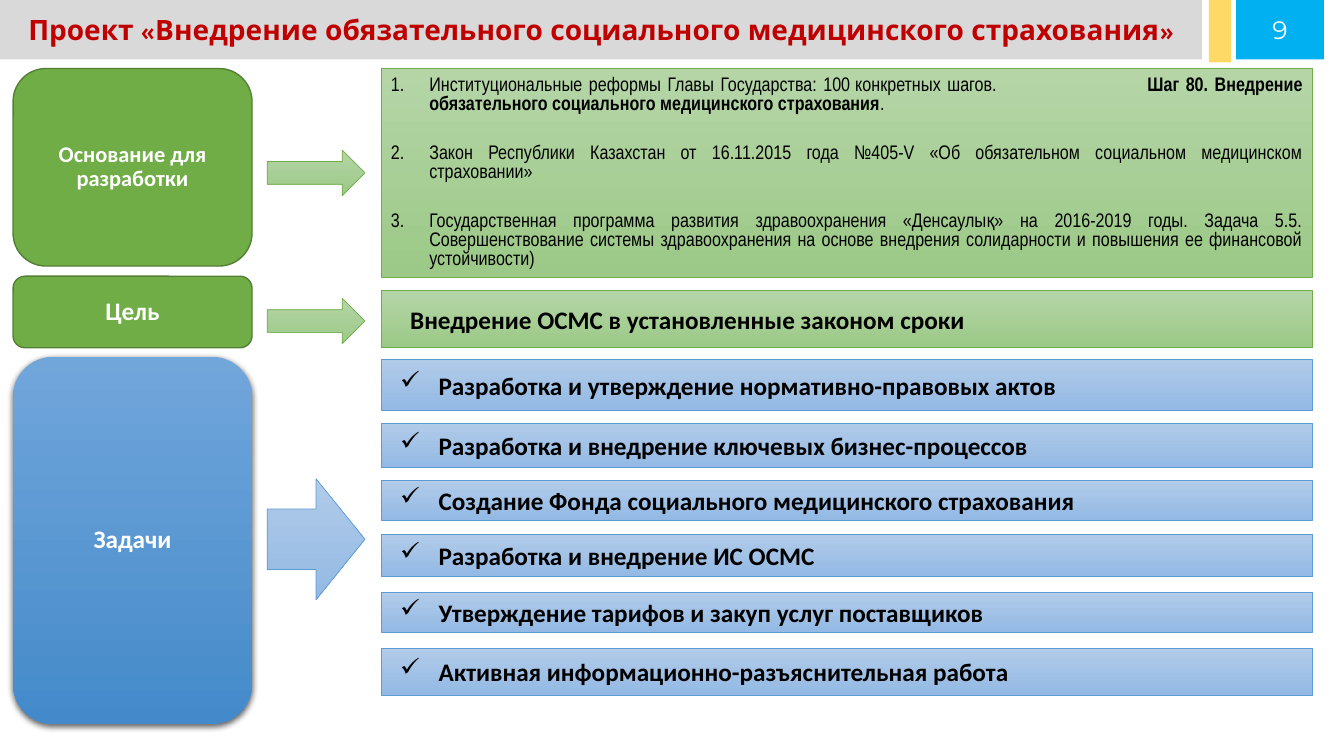
from lxml import etree
from pptx import Presentation
from pptx.dml.color import RGBColor
from pptx.enum.shapes import MSO_SHAPE as Shape
from pptx.enum.text import MSO_ANCHOR as Anchor, MSO_AUTO_SIZE as AutoSize, PP_ALIGN as Align
from pptx.oxml.ns import qn
from pptx.util import Inches, Pt

TITLE = "Проект «Внедрение обязательного социального медицинского страхования»"
PAGE_NUMBER = "9"

# Each basis is a list of (text, bold) runs
BASES = [
    [("Институциональные реформы Главы Государства: 100\u00a0конкретных шагов.\t", False),
     ("Шаг 80. Внедрение обязательного социального медицинского страхования", True),
     (".", False)],
    [("Закон Республики Казахстан от 16.11.2015 года №405-V "
      "«Об обязательном социальном медицинском страховании»", False)],
    [("Государственная программа развития здравоохранения «Денсаулық» на 2016-2019 годы. "
      "Задача 5.5. Совершенствование системы здравоохранения на основе внедрения "
      "солидарности и повышения ее финансовой устойчивости)", False)],
]
GOAL = "Внедрение ОСМС в установленные законом сроки"
# text, top, height
TASKS = [
    ("Разработка и утверждение нормативно-правовых актов", 3.57, 0.5),
    ("Разработка и внедрение ключевых бизнес-процессов", 4.2, 0.44),
    ("Создание Фонда социального медицинского страхования", 4.77, 0.39),
    ("Разработка и внедрение ИС ОСМС", 5.3, 0.42),
    ("Утверждение тарифов и закуп услуг поставщиков", 5.88, 0.39),
    ("Активная информационно-разъяснительная работа", 6.43, 0.47),
]
# label, top, height, text size, fill, line
STAGES = [
    ("Основание для разработки", 0.68, 1.96, 16, ["green"], "dark_green"),
    ("Цель", 2.74, 0.71, 18, ["green"], "dark_green"),
    ("Задачи", 3.54, 3.64, 18, ["blue_top", "blue_bottom"], None),
]
PALE_GREEN = ["pale_green_top", "pale_green_bottom"]
PALE_BLUE = ["pale_blue_top", "pale_blue_bottom"]
# top, height, fill, line
ARROWS = [
    (1.49, 0.45, PALE_GREEN, "green"),
    (2.96, 0.45, PALE_GREEN, "green"),
    (4.75, 1.2, PALE_BLUE, "blue"),
]

COLORS = {
    "green": "70AD47", "dark_green": "538035", "blue": "5B9BD5",
    "pale_green_top": "B5D5A7", "pale_green_bottom": "9CC987",
    "pale_blue_top": "B1CBE9", "pale_blue_bottom": "93B9E4",
    "blue_top": "71A6DB", "blue_bottom": "448ACA",
    "grey": "D9D9D9", "yellow": "FFD966", "cyan": "00B0F0",
    "red": "C00000", "white": "FFFFFF", "black": "000000",
}
STAGE_LEFT, STAGE_WIDTH = 0.13, 2.37
ARROW_LEFT, ARROW_WIDTH = 2.65, 0.97
PANEL_LEFT, PANEL_WIDTH = 3.78, 9.24


def color(name):
    return RGBColor.from_string(COLORS[name])


def add_box(page, kind, place, fill, line=None, weight=0.5):
    """Add a preset shape; two fill colours make a gradient from top to bottom."""
    box = page.shapes.add_shape(kind, *map(Inches, place))
    box.shadow.inherit = False
    if len(fill) == 1:
        box.fill.solid()
        box.fill.fore_color.rgb = color(fill[0])
    else:
        box.fill.gradient()
        box.fill.gradient_angle = 270
        for stop, name in zip(box.fill.gradient_stops, fill):
            stop.color.rgb = color(name)
    if line:
        box.line.color.rgb = color(line)
        box.line.width = Pt(weight)
    else:
        box.line.fill.background()
    return box


def set_margins(box, side, edge):
    frame = box.text_frame
    frame.margin_left = frame.margin_right = Inches(side)
    frame.margin_top = frame.margin_bottom = Inches(edge)


def style(para, font, size, ink, bold=False, align=Align.CENTER):
    para.alignment = align
    para.font.name, para.font.size, para.font.bold = font, Pt(size), bold
    para.font.color.rgb = color(ink)


def write(box, text, *look, **more):
    frame = box.text_frame
    frame.word_wrap = True
    frame.vertical_anchor = Anchor.MIDDLE
    para = frame.paragraphs[0]
    para.text = text
    style(para, *look, **more)
    return para


def set_indent(para, left, first=0):
    props = para._p.get_or_add_pPr()
    props.set("marL", str(Inches(left)))
    props.set("indent", str(Inches(first)))
    return props


def add_property(props, tag, **attributes):
    """Insert a paragraph property ahead of the default run properties."""
    item = etree.Element(qn(tag), attributes)
    props.find(qn("a:defRPr")).addprevious(item)
    return item


def add_shadow(box):
    effects = box._element.spPr.find(qn("a:effectLst"))
    shadow = etree.SubElement(effects, qn("a:outerShdw"), blurRad=str(Pt(4.5)),
                              dist=str(Pt(1.5)), dir="5400000", rotWithShape="0")
    ink = etree.SubElement(shadow, qn("a:srgbClr"), val=COLORS["black"])
    etree.SubElement(ink, qn("a:alpha"), val="63000")


def add_header(page):
    title = page.shapes.title
    title.left, title.top, title.width, title.height = map(Inches, (0, 0, 11.92, 0.59))
    title.fill.solid()
    title.fill.fore_color.rgb = color("grey")
    write(title, TITLE, "League Spartan", 20, "red", bold=True)
    title.text_frame.auto_size = AutoSize.NONE
    add_box(page, Shape.RECTANGLE, (11.99, 0, 0.22, 0.62), ["yellow"])
    number = add_box(page, Shape.RECTANGLE, (12.26, 0, 0.87, 0.59), ["cyan"])
    write(number, PAGE_NUMBER, "Montserrat", 18, "white")


def add_stages(page):
    for label, top, height, size, fill, line in STAGES:
        box = add_box(page, Shape.ROUNDED_RECTANGLE,
                      (STAGE_LEFT, top, STAGE_WIDTH, height), fill, line, 1)
        set_margins(box, 0.17, 0.13)
        write(box, label, "Calibri", size, "white", bold=True).line_spacing = 0.9
        if line is None:
            add_shadow(box)
    for top, height, fill, line in ARROWS:
        add_box(page, Shape.RIGHT_ARROW, (ARROW_LEFT, top, ARROW_WIDTH, height), fill, line)


def add_bases(page):
    panel = add_box(page, Shape.RECTANGLE, (PANEL_LEFT, 0.68, PANEL_WIDTH, 2.07),
                    PALE_GREEN, "green")
    frame = panel.text_frame
    frame.word_wrap = True
    frame.vertical_anchor = Anchor.MIDDLE
    for index, runs in enumerate(BASES):
        para = frame.add_paragraph() if index else frame.paragraphs[0]
        style(para, "Arial Narrow", 14, "black", align=Align.JUSTIFY)
        para.line_spacing = 0.8
        para.space_before = Pt(17.5 if index else 0)
        para.space_after = Pt(4)
        props = set_indent(para, 0.38, -0.38)
        add_property(props, "a:buFont", typeface="+mj-lt")
        add_property(props, "a:buAutoNum", type="arabicPeriod")
        if index == 0:
            tabs = add_property(props, "a:tabLst")
            etree.SubElement(tabs, qn("a:tab"), pos=str(Inches(7.4)), algn="l")
        for text, bold in runs:
            span = para.add_run()
            span.text, span.font.bold = text, bold


def add_goal_and_tasks(page):
    goal = add_box(page, Shape.RECTANGLE, (PANEL_LEFT, 2.88, PANEL_WIDTH, 0.57),
                   PALE_GREEN, "green")
    look = ("Calibri", 18, "black", True, Align.JUSTIFY)
    para = write(goal, GOAL, *look)
    para.space_before = Pt(6)
    set_indent(para, 0.19)
    for text, top, height in TASKS:
        row = add_box(page, Shape.RECTANGLE, (PANEL_LEFT, top, PANEL_WIDTH, height),
                      PALE_BLUE, "blue")
        set_margins(row, 0, 0.05)
        para = write(row, text, *look)
        para.space_before = Pt(6)
        add_property(set_indent(para, 0.57, -0.38), "a:buChar", char="✓")


def main():
    deck = Presentation()
    deck.slide_width, deck.slide_height = Inches(13.33), Inches(7.5)
    page = deck.slides.add_slide(deck.slide_layouts[5])
    add_header(page)
    add_stages(page)
    add_bases(page)
    add_goal_and_tasks(page)
    deck.save("out.pptx")


if __name__ == "__main__":
    main()
